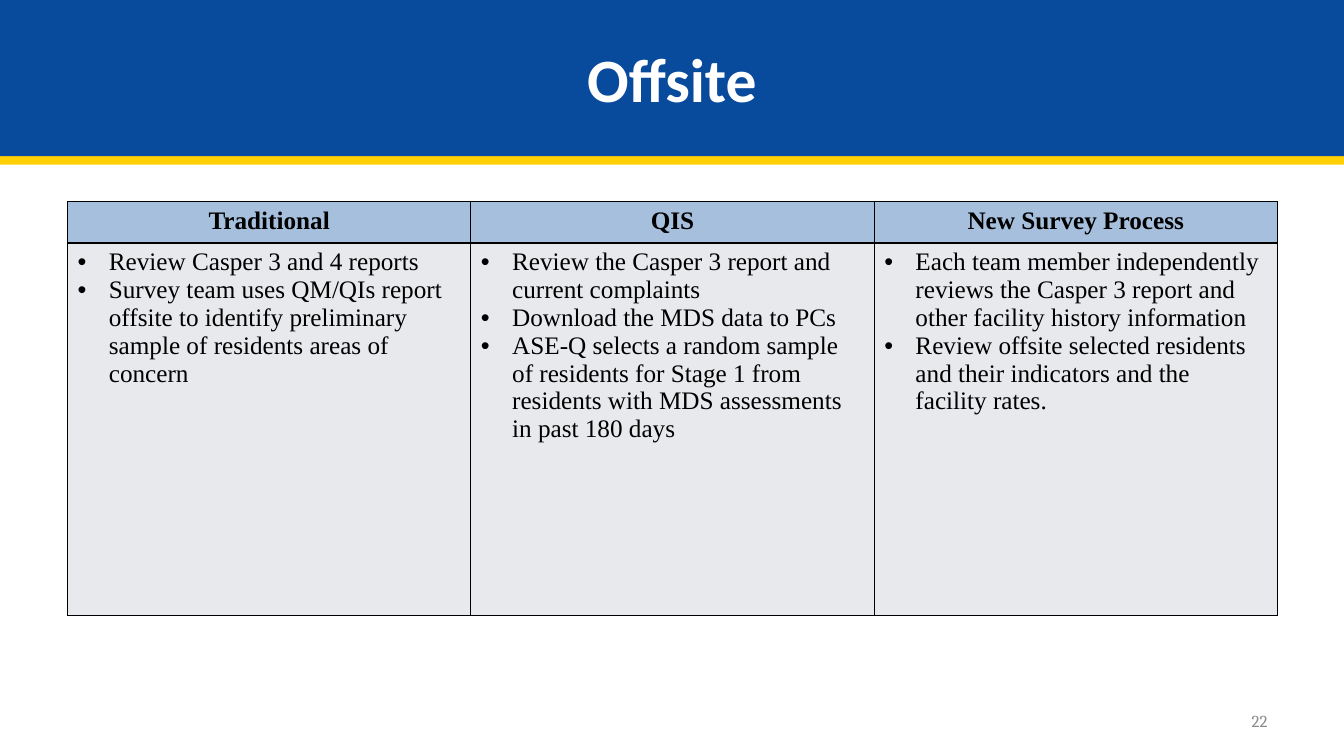
from lxml.etree import SubElement
from pptx import Presentation
from pptx.dml.color import RGBColor
from pptx.enum.text import MSO_ANCHOR, PP_ALIGN
from pptx.oxml.ns import qn
from pptx.util import Inches, Pt

COLORS = {
    "blue": "084A9C",
    "yellow": "FFD004",
    "white": "FFFFFF",
    "black": "000000",
    "header": "A6BFDD",
    "body": "E8E9EC",
    "gray": "8C8C8C",
}
TABLE_FONT = "Times New Roman"

PROCESSES = {
    "Traditional": [
        "Review Casper 3 and 4 reports",
        "Survey team uses QM/QIs report offsite to identify preliminary "
        "sample of residents areas of concern",
    ],
    "QIS": [
        "Review the Casper 3 report and current complaints",
        "Download the MDS data to PCs",
        "ASE-Q selects a random sample of residents for Stage 1 from "
        "residents with MDS assessments in past 180 days",
    ],
    "New Survey Process": [
        "Each team member independently reviews the Casper 3 report and "
        "other facility history information",
        "Review offsite selected residents and their indicators and the "
        "facility rates.",
    ],
}


def rgb(name):
    return RGBColor.from_string(COLORS[name])


def add_run(p, text, font, size, color, bold=False):
    r = p.add_run()
    r.text = text
    r.font.name = font
    r.font.size = Pt(size)
    r.font.bold = bold
    r.font.color.rgb = rgb(color)


def add_solid_fill(parent, color):
    fill = SubElement(parent, qn("a:solidFill"))
    SubElement(fill, qn("a:srgbClr"), val=COLORS[color])


def add_bullet(p):
    pPr = p._p.get_or_add_pPr()
    pPr.set("marL", str(Inches(0.31)))
    pPr.set("indent", str(Inches(-0.31)))
    bullet_color = SubElement(pPr, qn("a:buClr"))
    SubElement(bullet_color, qn("a:srgbClr"), val=COLORS["black"])
    SubElement(pPr, qn("a:buFont"), typeface="Arial")
    SubElement(pPr, qn("a:buChar"), char="•")


def format_cell(cell, color):
    """Give the cell thin black borders and a solid fill."""
    tcPr = cell._tc.get_or_add_tcPr()
    for side in ("a:lnL", "a:lnR", "a:lnT", "a:lnB"):
        add_solid_fill(SubElement(tcPr, qn(side), w=str(Pt(1))), "black")
    cell.fill.solid()
    cell.fill.fore_color.rgb = rgb(color)


def add_title(slide, text, width):
    """Turn the title placeholder into a banner with a yellow lower edge."""
    sp = slide.shapes.title
    sp.left, sp.top, sp.width, sp.height = 0, 0, width, Inches(1.55)
    sp.fill.solid()
    sp.fill.fore_color.rgb = rgb("blue")
    sp.shadow.inherit = False
    effects = sp._element.spPr.find(qn("a:effectLst"))
    shadow = SubElement(effects, qn("a:outerShdw"), blurRad="0",
                        dist=str(Pt(6)), dir="5400000", algn="t",
                        rotWithShape="0")
    SubElement(shadow, qn("a:srgbClr"), val=COLORS["yellow"])
    tf = sp.text_frame
    tf.vertical_anchor = MSO_ANCHOR.MIDDLE
    p = tf.paragraphs[0]
    p.alignment = PP_ALIGN.CENTER
    add_run(p, text, "Calibri", 44, "white", bold=True)


def add_process_table(slide):
    table = slide.shapes.add_table(
        2, len(PROCESSES), Inches(0.67), Inches(2), Inches(12), Inches(4.11)
    ).table
    table.rows[0].height = Inches(0.41)
    table.rows[1].height = Inches(3.7)
    for col, (heading, items) in enumerate(PROCESSES.items()):
        header, body = table.cell(0, col), table.cell(1, col)
        format_cell(header, "header")
        format_cell(body, "body")
        p = header.text_frame.paragraphs[0]
        p.alignment = PP_ALIGN.CENTER
        add_run(p, heading, TABLE_FONT, 18, "black", bold=True)
        tf = body.text_frame
        for i, item in enumerate(items):
            p = tf.add_paragraph() if i else tf.paragraphs[0]
            add_bullet(p)
            add_run(p, item, TABLE_FONT, 18, "black")


def add_page_number(slide, number):
    sp = slide.shapes.add_textbox(
        Inches(9.56), Inches(6.95), Inches(3.11), Inches(0.4))
    tf = sp.text_frame
    tf.word_wrap = True
    tf.vertical_anchor = MSO_ANCHOR.MIDDLE
    p = tf.paragraphs[0]
    p.alignment = PP_ALIGN.RIGHT
    add_run(p, number, "Cambria", 12, "gray")


def main():
    prs = Presentation()
    prs.slide_width, prs.slide_height = Inches(13.33), Inches(7.5)
    slide = prs.slides.add_slide(prs.slide_layouts[5])
    add_title(slide, "Offsite", prs.slide_width)
    add_process_table(slide)
    add_page_number(slide, "22")
    prs.save("out.pptx")


if __name__ == "__main__":
    main()
